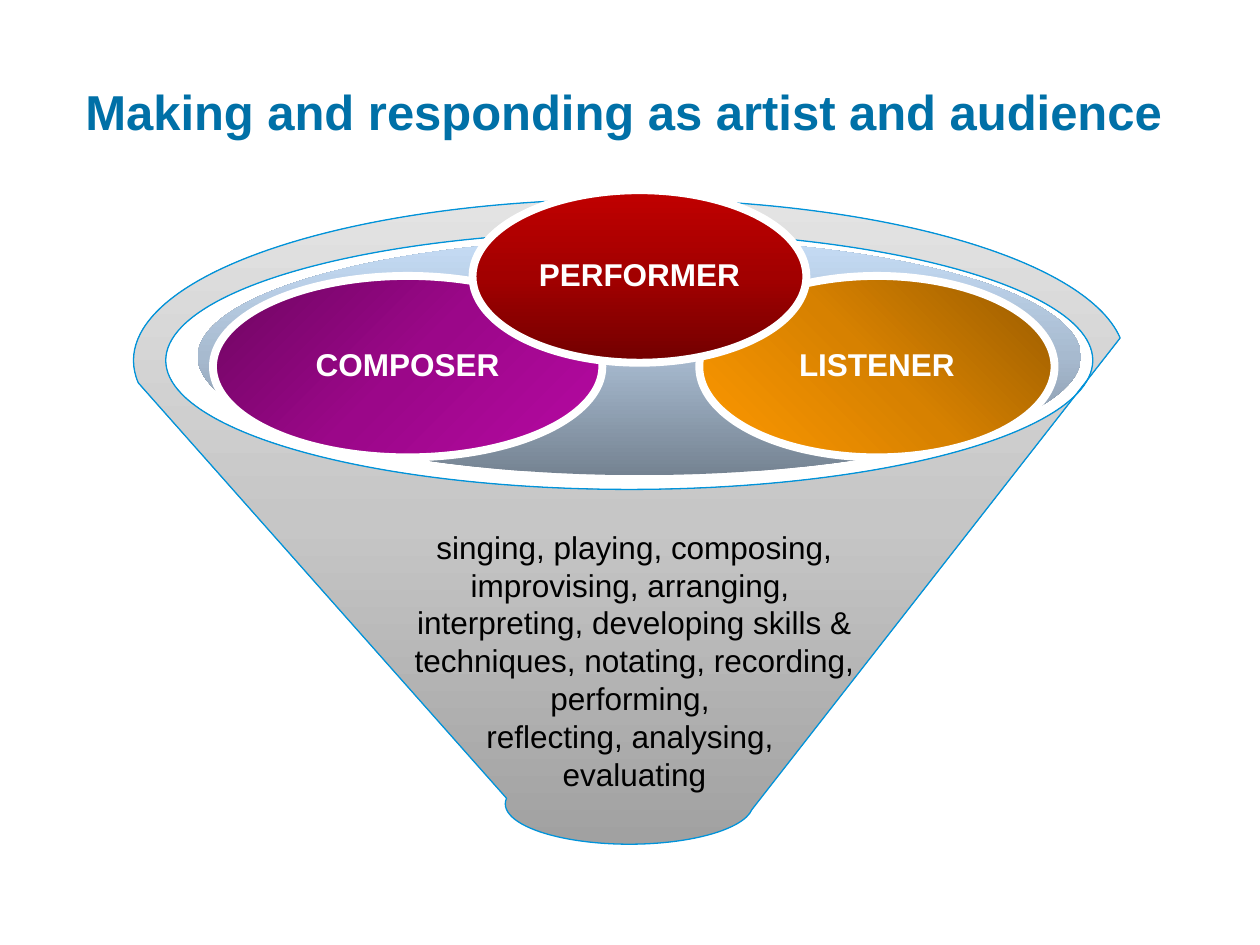
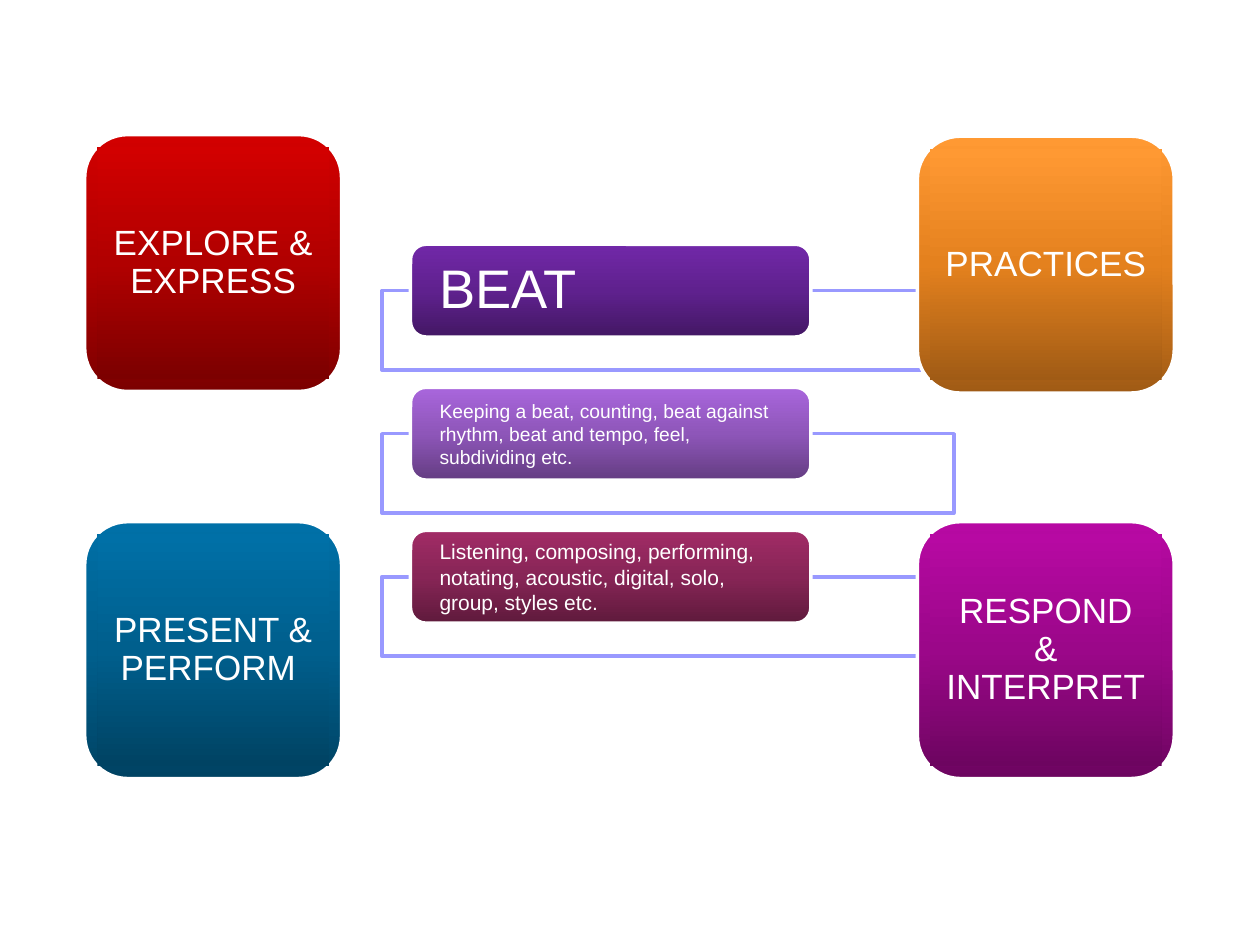
from copy import deepcopy

from pptx import Presentation
from pptx.dml.color import RGBColor
from pptx.enum.shapes import MSO_SHAPE
from pptx.enum.text import MSO_ANCHOR, PP_ALIGN
from pptx.util import Pt

OVAL = MSO_SHAPE.OVAL
FUNNEL = MSO_SHAPE.FUNNEL
RECTANGLE = MSO_SHAPE.RECTANGLE
ROUNDED = MSO_SHAPE.ROUNDED_RECTANGLE
LEFT, CENTER = PP_ALIGN.LEFT, PP_ALIGN.CENTER
TOP, MIDDLE = MSO_ANCHOR.TOP, MSO_ANCHOR.MIDDLE

FONT = "Arial"
COLORS = {
    "white": "FFFFFF",
    "black": "000000",
    "title": "0070A7",
    "funnel line": "0093DA",
    "frame line": "9999FF",
}
# Each gradient runs from its dark end to its light end.
GRADIENTS = {
    "steel": ("758392", "A7BACF", "C6DDF6"),
    "grey": ("A1A1A1", "C6C6C6", "E3E3E3"),
    "amber": ("975B00", "D78100", "FF9900"),
    "magenta": ("6D0560", "9B0789", "B709A3"),
    "dark red": ("720000", "A20000", "C00000"),
    "violet": ("431764", "5F218E", "7128A8"),
    "lilac": ("643D82", "8E56B9", "A966DC"),
    "plum": ("5F1A3C", "872556", "A12B66"),
    "orange": ("A05B15", "E4811E", "FF9933"),
    "red": ("7C0000", "B10000", "D20000"),
    "blue": ("004363", "005F8D", "0070A7"),
}
UPWARD, DOWN_RIGHT, DOWN_LEFT = 90, 315, 225

TILE_SIZE, TILE_INSET = 146.8, 7.2
LEFT_COLUMN, RIGHT_COLUMN = 48.4, 524.2
LOWER_ROW = 298.1
BAR_TOP, BAR_PITCH = 139.6, 81.75
BAR_WIDTH, BAR_HEIGHT = 228.8, 53


def rgb(name):
    return RGBColor.from_string(COLORS[name])


def fill_gradient(shape, name, angle=UPWARD):
    """Fill with three even stops; the angle is counter-clockwise."""
    fill = shape.fill
    fill.gradient()
    fill.gradient_angle = angle
    first_stop = shape.element.spPr.xpath("./a:gradFill/a:gsLst/a:gs")[0]
    first_stop.addnext(deepcopy(first_stop))
    for index, (stop, color) in enumerate(zip(fill.gradient_stops, GRADIENTS[name])):
        stop.position = index / 2
        stop.color.rgb = RGBColor.from_string(color)


def add_plain_shape(slide, kind, box, line=None, line_width=2):
    shape = slide.shapes.add_shape(kind, *map(Pt, box))
    shape.shadow.inherit = False
    if line:
        shape.line.color.rgb = rgb(line)
        shape.line.width = Pt(line_width)
    else:
        shape.line.fill.background()
    return shape


def write_text(shape, lines, size, color="white", bold=False, align=CENTER,
               anchor=MIDDLE, margins=(0, 0), spacing=None):
    """Write one paragraph per line; margins are horizontal and vertical."""
    frame = shape.text_frame
    frame.word_wrap = True
    frame.vertical_anchor = anchor
    frame.margin_left = frame.margin_right = Pt(margins[0])
    frame.margin_top = frame.margin_bottom = Pt(margins[1])
    frame.text = "\n".join(lines)
    for paragraph in frame.paragraphs:
        paragraph.alignment = align
        paragraph.line_spacing = spacing
        for run in paragraph.runs:
            run.font.name = FONT
            run.font.size = Pt(size)
            run.font.bold = bold
            run.font.color.rgb = rgb(color)


def add_text(slide, box, lines, size, color, bold=False):
    text_box = slide.shapes.add_textbox(*map(Pt, box))
    write_text(text_box, lines, size, color, bold, anchor=TOP, margins=(7.2, 3.6))


def add_role(slide, label, box, gradient, angle=UPWARD):
    oval = add_plain_shape(slide, OVAL, box, "white", 4.5)
    fill_gradient(oval, gradient, angle)
    write_text(oval, [label], 18, bold=True, spacing=0.9)


def add_tile(slide, label, left, top, gradient):
    tile = add_plain_shape(slide, ROUNDED, (left, top, TILE_SIZE, TILE_SIZE), "white")
    fill_gradient(tile, gradient)
    inner = TILE_SIZE - 2 * TILE_INSET
    face = add_plain_shape(
        slide, RECTANGLE, (left + TILE_INSET, top + TILE_INSET, inner, inner))
    fill_gradient(face, gradient)
    write_text(face, [label], 20, margins=(8.64, 8.64), spacing=0.9)


def add_bar(slide, row, text, size, gradient, spacing=None):
    top = BAR_TOP + row * BAR_PITCH
    frame = add_plain_shape(
        slide, RECTANGLE, (218.2, top + BAR_HEIGHT / 2, 326.9, 45.4), "frame line")
    frame.fill.solid()
    frame.fill.fore_color.rgb = rgb("white")
    bar = add_plain_shape(slide, ROUNDED, (234.6, top, BAR_WIDTH, BAR_HEIGHT), "white")
    fill_gradient(bar, gradient)
    write_text(bar, [text], size, align=LEFT, margins=(14, 1), spacing=spacing)


def build_funnel_slide(slide):
    add_text(slide, (0, 43.2, 712.8, 41),
             ["Making and responding as artist and audience"], 28, "title", True)
    opening = add_plain_shape(slide, OVAL, (113, 136.1, 504.7, 135.4))
    fill_gradient(opening, "steel")
    add_role(slide, "LISTENER", (399.6, 157.7, 203, 103.7), "amber", DOWN_LEFT)
    add_role(slide, "COMPOSER", (121.7, 157.7, 222.5, 103.7), "magenta", DOWN_RIGHT)
    funnel = add_plain_shape(
        slide, FUNNEL, (76.3, 113.8, 566.6, 368.6), "funnel line", 0.75)
    fill_gradient(funnel, "grey")
    add_role(slide, "PERFORMER", (270, 108.7, 190.8, 98.6), "dark red")
    add_text(slide, (212.4, 298.1, 300.2, 159.8), [
        "singing, playing, composing, improvising, arranging, ",
        "interpreting, developing skills & techniques, notating, recording,",
        "performing, ",
        "reflecting, analysing, ",
        "evaluating",
    ], 18, "black")


def build_beat_slide(slide):
    add_bar(slide, 0, "BEAT", 31, "violet", 0.9)
    add_bar(slide, 1, "Keeping a beat, counting, beat against rhythm, beat and tempo, "
            "feel, subdividing etc.", 11, "lilac")
    add_bar(slide, 2, "Listening, composing, performing, notating, acoustic, digital, "
            "solo, group, styles etc.", 12, "plum")
    add_tile(slide, "PRACTICES", RIGHT_COLUMN, 77.8, "orange")
    add_tile(slide, "EXPLORE & EXPRESS", LEFT_COLUMN, 76.9, "red")
    add_tile(slide, "PRESENT & PERFORM ", LEFT_COLUMN, LOWER_ROW, "blue")
    add_tile(slide, "RESPOND & INTERPRET", RIGHT_COLUMN, LOWER_ROW, "magenta")


def main():
    presentation = Presentation()
    presentation.slide_width = Pt(720)
    presentation.slide_height = Pt(540)
    blank_layout = presentation.slide_layouts[6]
    for build_slide in (build_funnel_slide, build_beat_slide):
        build_slide(presentation.slides.add_slide(blank_layout))
    presentation.save("out.pptx")


if __name__ == "__main__":
    main()
